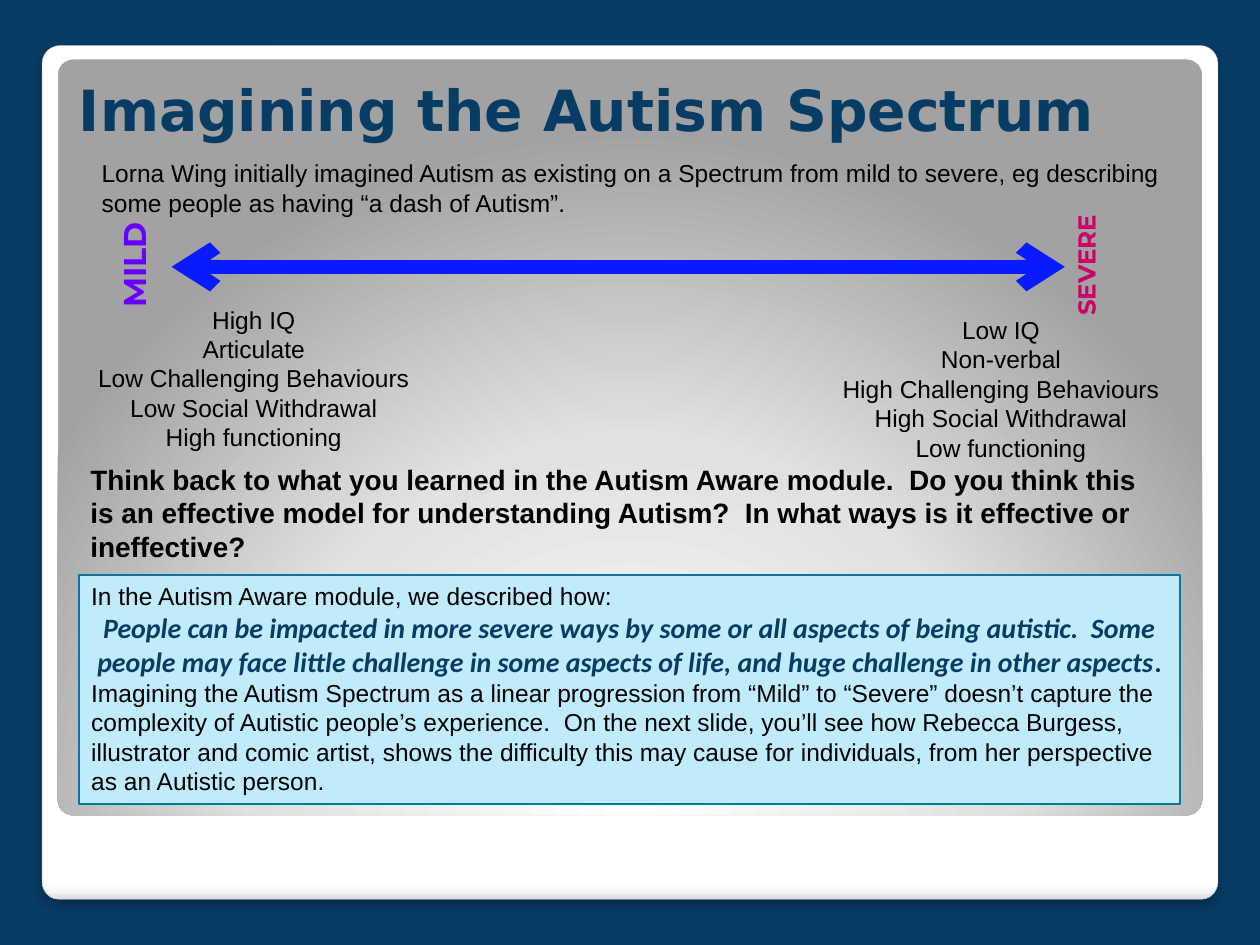
from lxml import etree
from pptx import Presentation, util as u
from pptx.dml.color import RGBColor
from pptx.enum import shapes, text
from pptx.oxml import parse_xml
from pptx.oxml.ns import nsdecls, qn

COLORS = {
    "navy": "073C65", "black": "000000", "grey": "A4A4A4", "arrow": "0A1AFF",
    "mild": "6600FF", "severe": "CC0066", "pale": "BFEBFA", "teal": "0B769C",
}
STYLES = {
    "title": ("DejaVu Sans", 32.4, "navy", True, False),
    "body": ("Arial", 14, "black", False, False),
    "question": ("Arial", 16, "black", True, False),
    "quote": ("Calibri", 16, "navy", True, True),
    "quote end": ("Calibri", 16, "navy", True, False),
    "mild": ("Montserrat", 18, "mild", True, False),
    "severe": ("Montserrat", 14, "severe", True, False),
}
LEFT, CENTER = text.PP_ALIGN.LEFT, text.PP_ALIGN.CENTER

TITLE = "Imagining the Autism Spectrum"
INTRO = ("Lorna Wing initially imagined Autism as existing on a Spectrum from mild to severe, "
         "eg describing some people as having “a dash of Autism”.")
SEVERE_TRAITS = ["Low IQ", "Non-verbal", "High Challenging Behaviours",
                 "High Social Withdrawal", "Low functioning"]
MILD_TRAITS = ["High IQ", "Articulate", "Low Challenging Behaviours",
               "Low Social Withdrawal", "High functioning"]
QUESTION = ("Think back to what you learned in the Autism Aware module.  Do you think this is an "
            "effective model for understanding Autism?  In what ways is it effective or ineffective?")
ANSWER = [
    (LEFT, [("In the Autism Aware module, we described how:", "body")]),
    (CENTER, [("People can be impacted in more severe ways by some or all aspects of being autistic.  "
               "Some people may face little challenge in some aspects of life, and huge challenge in "
               "other aspects", "quote"), (".", "quote end")]),
    (LEFT, [("Imagining the Autism Spectrum as a linear progression from “Mild” to “Severe” doesn’t "
             "capture the complexity of Autistic people’s experience.  On the next slide, you’ll see "
             "how Rebecca Burgess, illustrator and comic artist, shows the difficulty this may cause "
             "for individuals, from her perspective as an Autistic person.", "body")]),
]


def one(words, style):
    return [(LEFT, [(words, style)])]


def centered(lines):
    return [(CENTER, [(line, "body")]) for line in lines]


TEXTS = [
    ((38, 37.5, 644.5, 47.5), one(TITLE, "title"), text.MSO_ANCHOR.BOTTOM, False),
    ((51, 87, 623.5, 41), one(INTRO, "body"), text.MSO_ANCHOR.TOP, False),
    ((469.5, 176.5, 205, 92), centered(SEVERE_TRAITS), text.MSO_ANCHOR.TOP, False),
    ((37.5, 170.5, 215, 92), centered(MILD_TRAITS), text.MSO_ANCHOR.TOP, False),
    ((62, 101, 36, 82), one("MILD", "mild"), text.MSO_ANCHOR.TOP, True),
    ((608.5, 108.5, 31.5, 79), one("SEVERE", "severe"), text.MSO_ANCHOR.TOP, True),
    ((44.5, 260.5, 629.5, 65.5), one(QUESTION, "question"), text.MSO_ANCHOR.TOP, False),
]
CARDS = [
    ((24, 26, 672, 488), [(0, "FFFFFF"), (98, "FFFFFF"), (99, "F7F7F7"), (100, "DADADA")],
     '<a:lin ang="5400000" scaled="0"/>'),
    ((33, 34, 654, 432), [(0, "FFFFFF"), (55, "E1E1E1"), (100, "A2A2A2")],
     '<a:path path="circle"><a:fillToRect l="50000" t="175000" r="50000" b="-75000"/></a:path>'),
]
SHADOW = ('<a:effectLst %s><a:outerShdw blurRad="76200" dist="50800" dir="5400000" rotWithShape="0">'
          '<a:srgbClr val="000000"><a:alpha val="25000"/></a:srgbClr></a:outerShdw></a:effectLst>')


def color(name):
    return RGBColor.from_string(COLORS[name])


def points(box):
    return [u.Pt(length) for length in box]


def write(frame, paragraphs, anchor):
    frame.word_wrap = True
    frame.vertical_anchor = anchor
    for index, (align, runs) in enumerate(paragraphs):
        paragraph = frame.paragraphs[0] if index == 0 else frame.add_paragraph()
        paragraph.alignment = align
        for words, style in runs:
            run = paragraph.add_run()
            run.text = words
            font = run.font
            font.name, size, ink, font.bold, font.italic = STYLES[style]
            font.size = u.Pt(size)
            font.color.rgb = color(ink)


def add_card(slide, box, stops, direction):
    card = slide.shapes.add_shape(shapes.MSO_SHAPE.ROUNDED_RECTANGLE, *points(box))
    card.adjustments[0] = 0.021
    card.shadow.inherit = False
    card.line.fill.background()
    listed = "".join(f'<a:gs pos="{at * 1000}"><a:srgbClr val="{tone}"/></a:gs>' for at, tone in stops)
    gradient = parse_xml(f'<a:gradFill {nsdecls("a")} rotWithShape="1"><a:gsLst>{listed}</a:gsLst>'
                         f'{direction}</a:gradFill>')
    card._element.spPr.find(qn("a:prstGeom")).addnext(gradient)
    return card


def add_spectrum(slide):
    spectrum = slide.shapes.add_connector(shapes.MSO_CONNECTOR.STRAIGHT, *points((98, 152.5, 608.5, 152.5)))
    spectrum.line.width = u.Pt(8)
    spectrum.line.color.rgb = color("arrow")
    for end in ("a:headEnd", "a:tailEnd"):
        etree.SubElement(spectrum.line._get_or_add_ln(), qn(end), type="arrow")
    etree.SubElement(spectrum._element.spPr, qn("a:effectLst"))


def main():
    deck = Presentation()
    deck.slide_width, deck.slide_height = u.Pt(720), u.Pt(540)
    slide = deck.slides.add_slide(deck.slide_layouts[6])
    slide.background.fill.solid()
    slide.background.fill.fore_color.rgb = color("navy")

    frame_card, panel = [add_card(slide, *card) for card in CARDS]
    frame_card.line.color.rgb = color("grey")
    frame_card.line.width = u.Pt(0.16)
    properties = frame_card._element.spPr
    properties.replace(properties.find(qn("a:effectLst")), parse_xml(SHADOW % nsdecls("a")))

    add_spectrum(slide)
    for box, paragraphs, anchor, upright in TEXTS:
        frame = slide.shapes.add_textbox(*points(box)).text_frame
        write(frame, paragraphs, anchor)
        if upright:
            frame._txBody.bodyPr.set("vert", "vert270")

    answer = slide.shapes.add_shape(shapes.MSO_SHAPE.RECTANGLE, *points((45, 328.5, 629.5, 131)))
    answer.shadow.inherit = False
    answer.fill.solid()
    answer.fill.fore_color.rgb = color("pale")
    answer.line.color.rgb = color("teal")
    answer.line.width = u.Pt(1.25)
    write(answer.text_frame, ANSWER, text.MSO_ANCHOR.TOP)

    deck.save("out.pptx")


if __name__ == "__main__":
    main()
